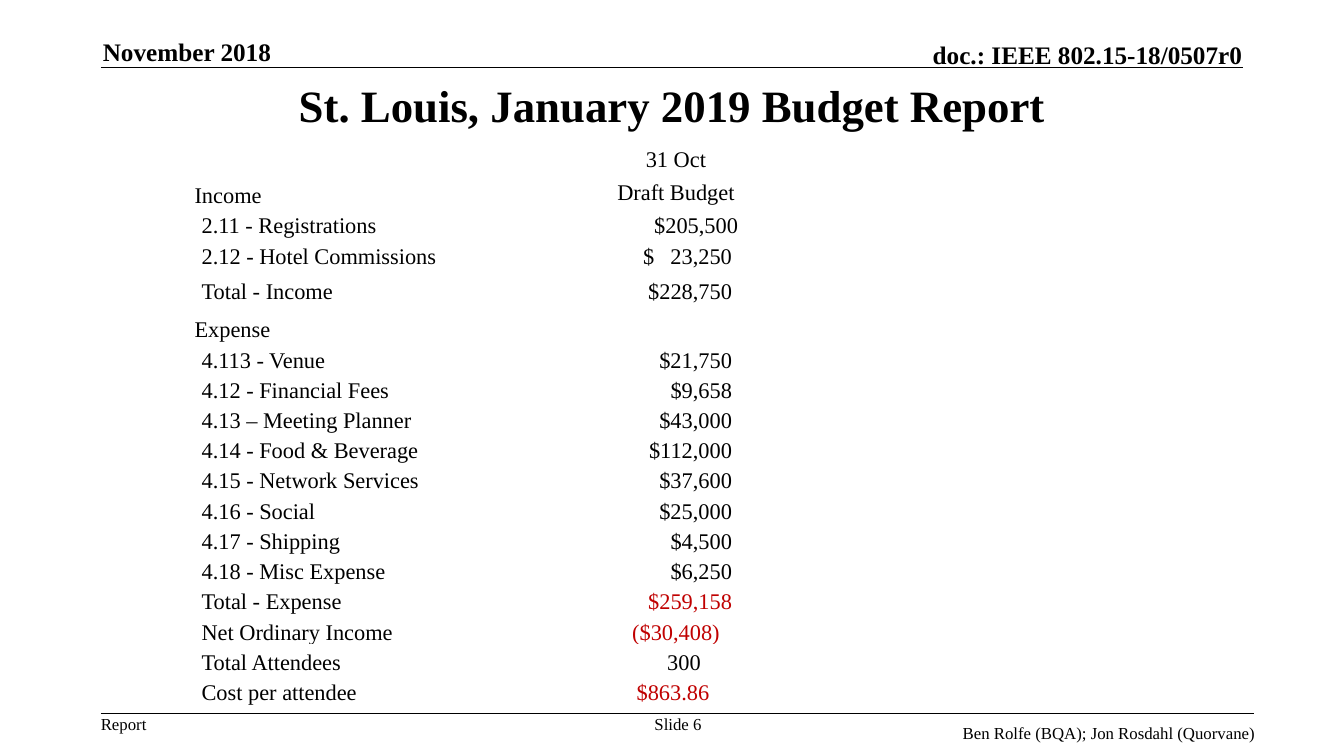
from lxml import etree
from pptx import Presentation
from pptx.dml.color import RGBColor
from pptx.enum import shapes, text
from pptx.oxml.ns import qn
from pptx.util import Inches, Pt

FONT = "Times New Roman"
BLACK, WHITE, RED = "000000", "FFFFFF", "C00000"
LEFT, CENTER, RIGHT = text.PP_ALIGN.LEFT, text.PP_ALIGN.CENTER, text.PP_ALIGN.RIGHT
TOP, MIDDLE, BOTTOM = text.MSO_ANCHOR.TOP, text.MSO_ANCHOR.MIDDLE, text.MSO_ANCHOR.BOTTOM

TITLE = "St. Louis, January 2019 Budget Report"

# Label, value, value alignment, value colour, left and right value margins
PAD = 0.07
BUDGET = [
    ("", "31 Oct", CENTER, BLACK, 0.01, 0.01),
    ("Income", "Draft Budget", CENTER, BLACK, 0.01, 0.01),
    ("2.11 - Registrations", "$205,500", RIGHT, BLACK, 0.01, 0.01),
    ("2.12 - Hotel Commissions", "$\t23,250", LEFT, BLACK, 0.3, 0.01),
    ("Total - Income", "$228,750", RIGHT, BLACK, 0.01, PAD),
    ("Expense", "", RIGHT, BLACK, 0.01, PAD),
    ("4.113 - Venue", "$21,750", RIGHT, BLACK, 0.01, PAD),
    ("4.12 - Financial Fees", "$9,658", RIGHT, BLACK, 0.01, PAD),
    ("4.13 – Meeting Planner", "$43,000", RIGHT, BLACK, 0.01, PAD),
    ("4.14 - Food & Beverage", "$112,000", RIGHT, BLACK, 0.01, PAD),
    ("4.15 - Network Services", "$37,600", RIGHT, BLACK, 0.01, PAD),
    ("4.16 - Social", "$25,000", RIGHT, BLACK, 0.01, PAD),
    ("4.17 - Shipping", "$4,500", RIGHT, BLACK, 0.01, PAD),
    ("4.18 - Misc Expense", "$6,250", RIGHT, BLACK, 0.01, PAD),
    ("Total - Expense", "$259,158", RIGHT, RED, 0.01, PAD),
    ("Net Ordinary Income", "($30,408)", CENTER, RED, 0.01, 0.01),
    ("Total Attendees", "300", CENTER, BLACK, 0.17, 0.01),
    ("Cost per attendee", "$863.86", CENTER, RED, 0.01, PAD),
]
COLUMN_WIDTHS = [0.07, 1.52, 2.57, 1.25, 1.75, 0.08, 1.92, 1.36]
ROW_HEIGHTS = [0.32, 0.33, 0.3, 0.3, 0.35, 0.38] + [0.3] * 12
HEADINGS = ("Income", "Expense")
VALUE_COLUMN = 3

# Wording, (left, top, width, height), size, bold, alignment, anchor
MARGIN_TEXTS = [
    ("November 2018", (1.02, 0.36, 2.73, 0.3), 18, True, LEFT, BOTTOM),
    ("doc.: IEEE 802.15-18/0507r0", (5.22, 0.39, 7.1, 0.3), 18, True, RIGHT, BOTTOM),
    ("Report", (1, 7.08, 0.46, 0.2), 12, False, LEFT, TOP),
    ("Slide 6", (6.34, 7.08, 0.77, 0.4), 12, False, CENTER, TOP),
    ("Ben Rolfe (BQA); Jon Rosdahl (Quorvane)", (7.99, 7.17, 4.46, 0.2), 12, False, RIGHT, TOP),
]
# Left, right and height of each rule
RULES = [(1, 12.33, 0.67), (1, 12.44, 7.08)]


def color(value):
    return RGBColor.from_string(value)


def style(para, size, bold=False, align=LEFT, ink=BLACK):
    para.alignment = align
    para.font.name, para.font.size, para.font.bold = FONT, Pt(size), bold
    para.font.color.rgb = color(ink)


def fill_cell(cell, wording, align=LEFT, ink=BLACK, left=0.01, right=0.01, anchor=BOTTOM):
    cell.margin_left, cell.margin_right = Inches(left), Inches(right)
    cell.vertical_anchor = anchor
    para = cell.text_frame.paragraphs[0]
    if "\t" in wording:
        stops = etree.SubElement(para._p.get_or_add_pPr(), qn("a:tabLst"))
        etree.SubElement(stops, qn("a:tab"), pos=str(Inches(0.88)), algn="r")
    para.text = wording
    style(para, 16, align=align, ink=ink)


deck = Presentation()
deck.slide_width, deck.slide_height = Inches(13.33), Inches(7.5)
page = deck.slides.add_slide(deck.slide_layouts[5])

# Title
title = page.shapes.title
title.left, title.top, title.width, title.height = map(Inches, (1, 0.75, 11.33, 0.58))
title.text_frame.text = TITLE
title.text_frame.vertical_anchor = MIDDLE
style(title.text_frame.paragraphs[0], 32, True, CENTER)

# Header and footer rules
for start, end, height in RULES:
    rule = page.shapes.add_connector(
        shapes.MSO_CONNECTOR.STRAIGHT, Inches(start), Inches(height), Inches(end), Inches(height))
    rule.line.color.rgb = color(BLACK)
    rule.line.width = Pt(1)
    etree.SubElement(rule._element.spPr, qn("a:effectLst"))

# Budget table
table = page.shapes.add_table(
    len(ROW_HEIGHTS), len(COLUMN_WIDTHS), Inches(1.92), Inches(1.42),
    Inches(sum(COLUMN_WIDTHS)), Inches(sum(ROW_HEIGHTS))).table
table.first_row = table.horz_banding = False
for column, width in zip(table.columns, COLUMN_WIDTHS):
    column.width = Inches(width)
for row, height in zip(table.rows, ROW_HEIGHTS):
    row.height = Inches(height)
for cell in table.iter_cells():
    cell.fill.solid()
    cell.fill.fore_color.rgb = color(WHITE)
    cell.margin_left = cell.margin_right = cell.margin_top = Inches(0.01)
    cell.margin_bottom = 0
    # Keeps empty cells from stretching their row
    etree.SubElement(cell.text_frame.paragraphs[0]._p, qn("a:endParaRPr"), sz="1600")

for index, (label, value, align, ink, left, right) in enumerate(BUDGET):
    first, last = (0, 2) if label in HEADINGS else (1, 2) if label else (0, 1)
    table.cell(index, first).merge(table.cell(index, last))
    if label:
        fill_cell(table.cell(index, first), label)
    if value:
        anchor = MIDDLE if index < 2 else BOTTOM
        fill_cell(table.cell(index, VALUE_COLUMN), value, align, ink, left, right, anchor)

# Header and footer texts
for wording, place, size, bold, align, anchor in MARGIN_TEXTS:
    frame = page.shapes.add_textbox(*map(Inches, place)).text_frame
    frame.margin_left = frame.margin_right = frame.margin_top = frame.margin_bottom = 0
    frame.word_wrap = True
    frame.vertical_anchor = anchor
    frame.text = wording
    style(frame.paragraphs[0], size, bold, align)

deck.save("out.pptx")
